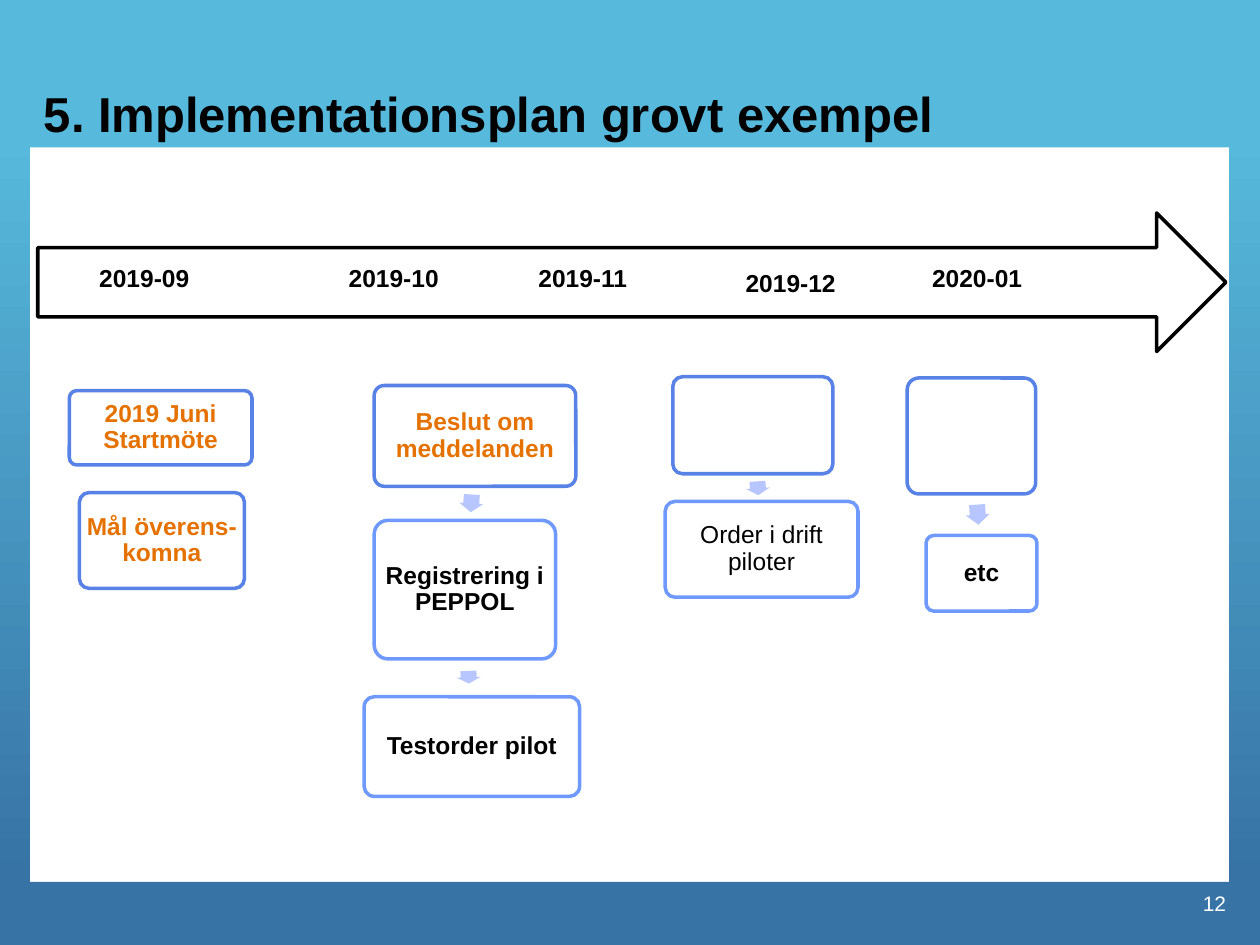
from dataclasses import dataclass

from lxml.etree import SubElement
from pptx import Presentation
from pptx.dml.color import RGBColor
from pptx.enum.shapes import MSO_SHAPE as Preset
from pptx.enum.text import MSO_ANCHOR as Anchor, PP_ALIGN as Align
from pptx.oxml.ns import qn
from pptx.shapes.autoshape import Shape
from pptx.slide import Slide
from pptx.util import Inches, Pt

COLORS = {
    "sky": "57B9DC",
    "ocean": "3773A5",
    "white": "FFFFFF",
    "black": "000000",
    "orange": "E57200",
    "start_border": "5882E6",
    "step_border": "618FFD",
    "small_arrow": "B7C6FE",
}
FONT = "Arial"


@dataclass(frozen=True)
class Area:
    left: float
    top: float
    width: float
    height: float

    def lengths(self) -> list[Inches]:
        return [Inches(n) for n in (self.left, self.top, self.width, self.height)]


@dataclass(frozen=True)
class Card:
    area: Area
    text: str = ""
    first: bool = False
    bold: bool = True


@dataclass(frozen=True)
class StepArrow:
    area: Area
    rotation: float


@dataclass(frozen=True)
class Month:
    text: str
    left: float
    top: float = 1.94


CARDS = [
    Card(Area(0.55, 3.1, 1.45, 0.59), "2019 Juni Startmöte", first=True),
    Card(Area(0.63, 3.91, 1.31, 0.76), "Mål överens-komna", first=True),
    Card(Area(2.97, 3.06, 1.6, 0.8), "Beslut om meddelanden", first=True),
    Card(Area(2.97, 4.13, 1.44, 1.1), "Registrering i PEPPOL"),
    Card(Area(2.89, 5.53, 1.71, 0.79), "Testorder pilot"),
    Card(Area(5.34, 2.99, 1.27, 0.77), first=True),
    Card(Area(5.28, 3.98, 1.53, 0.76), "Order i drift piloter", bold=False),
    Card(Area(7.2, 3, 1.02, 0.92), first=True),
    Card(Area(7.35, 4.25, 0.88, 0.6), "etc"),
]
STEP_ARROWS = [
    StepArrow(Area(3.67, 3.9, 0.14, 0.19), 93.6),
    StepArrow(Area(3.67, 5.28, 0.1, 0.19), 87.4),
    StepArrow(Area(5.96, 3.78, 0.11, 0.19), 86.1),
    StepArrow(Area(7.68, 3.99, 0.16, 0.19), 85.8),
]
MONTHS = [
    Month("2019-09", 0.42),
    Month("2019-10", 2.4),
    Month("2019-11", 3.9),
    Month("2019-12", 5.55, 1.98),
    Month("2020-01", 7.03),
]


def color(name: str) -> RGBColor:
    return RGBColor.from_string(COLORS[name])


def add_preset(slide: Slide, preset: Preset, area: Area, fill: str, border: str = "") -> Shape:
    shape = slide.shapes.add_shape(preset, *area.lengths())
    shape.shadow.inherit = False
    shape.fill.solid()
    shape.fill.fore_color.rgb = color(fill)
    if border:
        shape.line.color.rgb = color(border)
        shape.line.width = Pt(2)
    else:
        shape.line.fill.background()
    return shape


def add_side_band(slide: Slide, left: float) -> None:
    shape = add_preset(slide, Preset.RECTANGLE, Area(left, 1.08, 0.25, 5.92), "sky")
    shape.fill.gradient()
    shape.fill.gradient_angle = 270
    for stop, name, position in zip(shape.fill.gradient_stops, ("sky", "ocean"), (0, 1)):
        stop.color.rgb = color(name)
        stop.position = position


def write_text(shape: Shape, text: str, size: float, name: str, bold: bool = True,
               align: Align = Align.CENTER, margins: tuple[float, float] = (0.1, 0.05),
               spacing: float = 1.0, wrap: bool = True) -> None:
    frame = shape.text_frame
    frame.word_wrap = wrap
    frame.vertical_anchor = Anchor.MIDDLE
    frame.margin_left = frame.margin_right = Inches(margins[0])
    frame.margin_top = frame.margin_bottom = Inches(margins[1])
    paragraph = frame.paragraphs[0]
    paragraph.alignment = align
    paragraph.line_spacing = spacing
    run = paragraph.add_run()
    run.text = text
    run.font.name = FONT
    run.font.size = Pt(size)
    run.font.bold = bold
    run.font.color.rgb = color(name)


def set_opacity(shape: Shape, percent: int) -> None:
    for element in shape._element.spPr.iter(qn("a:srgbClr")):
        SubElement(element, qn("a:alpha"), val=str(percent * 1000))


def add_card(slide: Slide, card: Card) -> None:
    border = "start_border" if card.first else "step_border"
    shape = add_preset(slide, Preset.ROUNDED_RECTANGLE, card.area, "white", border)
    shape.adjustments[0] = 0.1
    if not card.first:
        set_opacity(shape, 90)
    if card.text:
        write_text(shape, card.text, 14, "orange" if card.first else "black",
                   card.bold, margins=(0.02, 0.02), spacing=0.9)


def add_step_arrow(slide: Slide, arrow: StepArrow) -> None:
    shape = add_preset(slide, Preset.RIGHT_ARROW, arrow.area, "small_arrow")
    shape.adjustments[0] = 0.667
    shape.rotation = arrow.rotation


def add_month(slide: Slide, month: Month) -> None:
    box = slide.shapes.add_textbox(*Area(month.left, month.top, 1.45, 0.55).lengths())
    write_text(box, month.text, 14, "black", margins=(0, 0.16), spacing=0.9)


def main() -> None:
    presentation = Presentation()
    presentation.slide_width = Inches(10)
    presentation.slide_height = Inches(7.5)
    slide = presentation.slides.add_slide(presentation.slide_layouts[6])

    add_side_band(slide, -0.01)
    add_preset(slide, Preset.RECTANGLE, Area(0, 7, 10, 0.5), "ocean")
    add_preset(slide, Preset.RECTANGLE, Area(0, 0, 10, 1.17), "sky")
    add_side_band(slide, 9.75)

    number = slide.shapes.add_textbox(*Area(7.75, 6.92, 2.08, 0.5).lengths())
    write_text(number, "12", 12, "white", bold=False, align=Align.RIGHT, wrap=False)
    title = slide.shapes.add_textbox(*Area(0.25, 0.6, 8.5, 0.6).lengths())
    write_text(title, "5. Implementationsplan grovt exempel", 28, "black", align=Align.LEFT)

    for card in CARDS:
        add_card(slide, card)
    for arrow in STEP_ARROWS:
        add_step_arrow(slide, arrow)

    add_preset(slide, Preset.RIGHT_ARROW, Area(0.3, 1.69, 9.43, 1.1), "white", "black")
    for month in MONTHS:
        add_month(slide, month)

    presentation.save("out.pptx")


if __name__ == "__main__":
    main()
